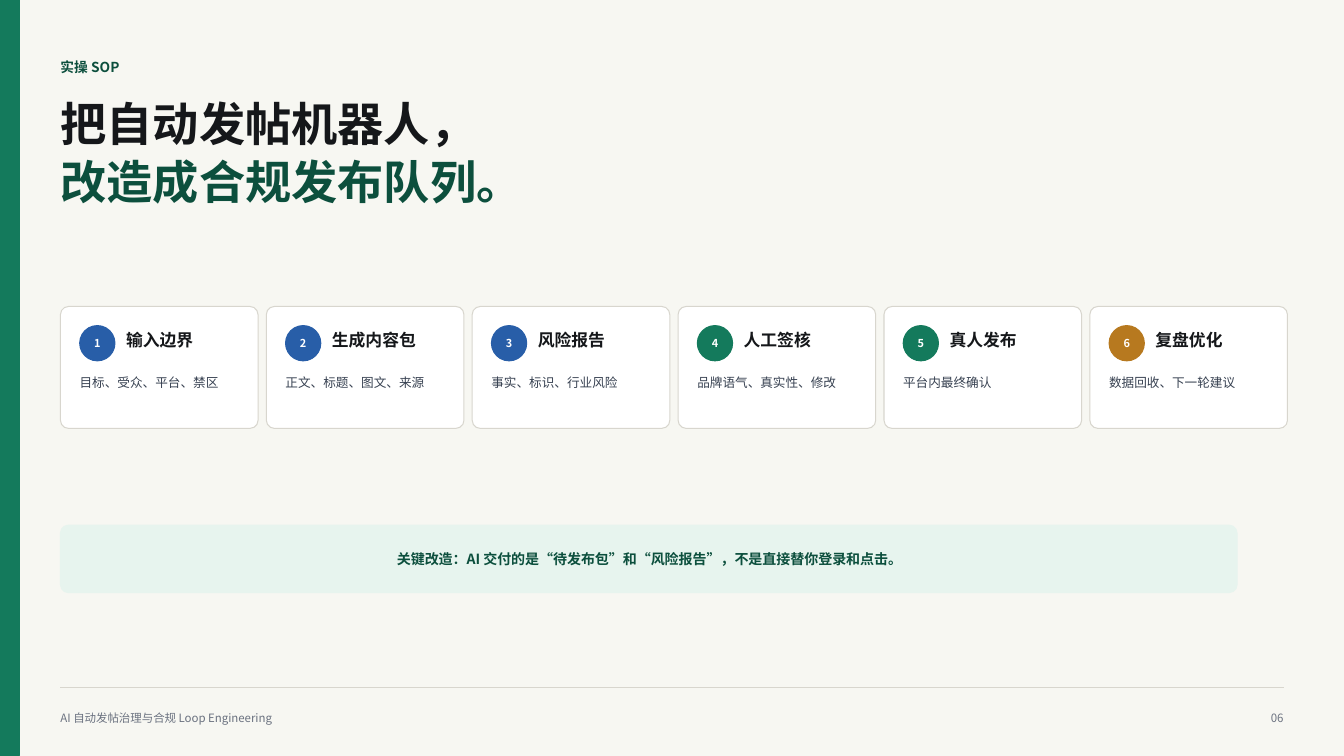
from lxml.etree import SubElement
from pptx import Presentation
from pptx.dml.color import RGBColor
from pptx.enum.shapes import MSO_CONNECTOR as Connector, MSO_SHAPE as Preset
from pptx.enum.text import PP_ALIGN as Align
from pptx.oxml.ns import qn
from pptx.util import Inches, Pt

FONT = "Noto Sans CJK SC"
PAPER = RGBColor(0xF7, 0xF7, 0xF2)
WHITE = RGBColor(0xFF, 0xFF, 0xFF)
INK = RGBColor(0x15, 0x17, 0x1A)
BODY = RGBColor(0x37, 0x41, 0x51)
MUTED = RGBColor(0x6B, 0x72, 0x80)
BORDER = RGBColor(0xD8, 0xD6, 0xCE)
GREEN = RGBColor(0x14, 0x7A, 0x5C)
DARK_GREEN = RGBColor(0x0C, 0x4F, 0x3D)
MINT = RGBColor(0xE7, 0xF4, 0xEE)
BLUE = RGBColor(0x28, 0x5E, 0xA8)
AMBER = RGBColor(0xB7, 0x79, 0x1F)

MARGIN = 0.6
CARD_TOP = 3.04
FIRST_CARD, LAST_CARD = MARGIN, 10.81
STEPS = [
    ("输入边界", "目标、受众、平台、禁区", BLUE),
    ("生成内容包", "正文、标题、图文、来源", BLUE),
    ("风险报告", "事实、标识、行业风险", BLUE),
    ("人工签核", "品牌语气、真实性、修改", GREEN),
    ("真人发布", "平台内最终确认", GREEN),
    ("复盘优化", "数据回收、下一轮建议", AMBER),
]


def add_text(page, text, left, top, width, height, *, size, color,
             bold=False, align=Align.LEFT, spacing=1.12):
    box = page.shapes.add_textbox(Inches(left), Inches(top), Inches(width), Inches(height))
    frame = box.text_frame
    frame.word_wrap = True
    frame.margin_left = frame.margin_right = frame.margin_top = frame.margin_bottom = 0
    para = frame.paragraphs[0]
    para.alignment = align
    para.line_spacing = spacing
    span = para.add_run()
    span.text = text
    span.font.size = Pt(size)
    span.font.bold = bold
    span.font.color.rgb = color
    span.font.name = FONT
    SubElement(span.font._element, qn("a:ea"), typeface=FONT)


def add_panel(page, preset, left, top, width, height, fill, line=None, radius=None):
    panel = page.shapes.add_shape(preset, Inches(left), Inches(top), Inches(width), Inches(height))
    panel.shadow.inherit = False
    panel.fill.solid()
    panel.fill.fore_color.rgb = fill
    panel.line.color.rgb = line or fill
    panel.line.width = Pt(0.75)
    if radius is not None:
        panel.adjustments[0] = radius / min(width, height)


def add_rule(page, left, right, top):
    rule = page.shapes.add_connector(
        Connector.STRAIGHT, Inches(left), Inches(top), Inches(right), Inches(top))
    rule.line.color.rgb = BORDER
    rule.line.width = Pt(0.75)
    SubElement(rule._element.spPr, qn("a:effectLst"))


def add_step(page, number, left, title, detail, color):
    inner = left + 0.19
    add_panel(page, Preset.ROUNDED_RECTANGLE, left, CARD_TOP, 1.96, 1.21,
              WHITE, line=BORDER, radius=0.08)
    add_panel(page, Preset.OVAL, inner, CARD_TOP + 0.19, 0.35, 0.35, color)
    add_text(page, str(number), inner, CARD_TOP + 0.28, 0.35, 0.15,
             size=7.8, color=WHITE, bold=True, align=Align.CENTER)
    add_text(page, title, left + 0.65, CARD_TOP + 0.21, 1.08, 0.27,
             size=12, color=INK, bold=True)
    add_text(page, detail, inner, CARD_TOP + 0.66, 1.56, 0.4,
             size=9, color=BODY, spacing=1.1)


def add_header(page):
    add_text(page, "实操 SOP", MARGIN, 0.56, 8.96, 0.25, size=9.8, color=DARK_GREEN, bold=True)
    add_text(page, "把自动发帖机器人，", MARGIN, 0.98, 7.5, 0.56,
             size=33, color=INK, bold=True, spacing=0.96)
    add_text(page, "改造成合规发布队列。", MARGIN, 1.56, 8.54, 0.58,
             size=33, color=DARK_GREEN, bold=True, spacing=0.96)


def add_footer(page):
    add_rule(page, MARGIN, 12.73, 6.82)
    add_text(page, "AI 自动发帖治理与合规 Loop Engineering", MARGIN, 7.04, 6.67, 0.25,
             size=8.2, color=MUTED)
    add_text(page, "06", 12.23, 7.04, 0.5, 0.25, size=8.2, color=MUTED, align=Align.RIGHT)


def add_takeaway(page):
    add_panel(page, Preset.ROUNDED_RECTANGLE, MARGIN, 5.21, 11.67, 0.67, MINT, radius=0.08)
    add_text(page, "关键改造：AI 交付的是“待发布包”和“风险报告”，不是直接替你登录和点击。",
             0.9, 5.44, 11.08, 0.19, size=10, color=DARK_GREEN, bold=True, align=Align.CENTER)


def main():
    deck = Presentation()
    deck.slide_width = Inches(13.33)
    deck.slide_height = Inches(7.5)
    page = deck.slides.add_slide(deck.slide_layouts[6])
    page.background.fill.solid()
    page.background.fill.fore_color.rgb = PAPER

    add_panel(page, Preset.RECTANGLE, 0, 0, 0.19, 7.5, GREEN)
    add_footer(page)
    add_header(page)
    pitch = (LAST_CARD - FIRST_CARD) / (len(STEPS) - 1)
    for index, (title, detail, color) in enumerate(STEPS):
        add_step(page, index + 1, FIRST_CARD + index * pitch, title, detail, color)
    add_takeaway(page)
    deck.save("out.pptx")


if __name__ == "__main__":
    main()
